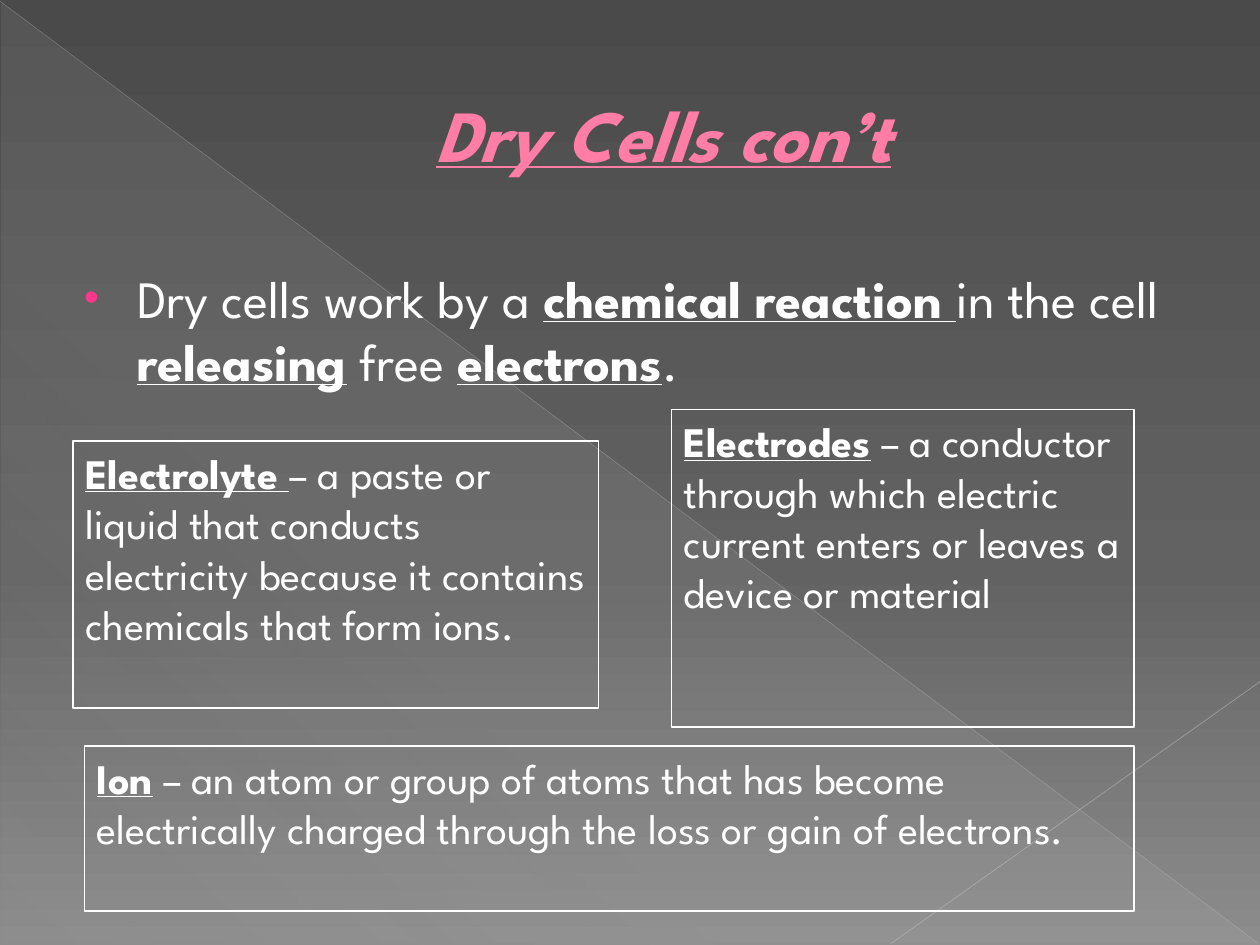
from lxml.etree import SubElement
from pptx import Presentation
from pptx.dml.color import RGBColor
from pptx.enum.shapes import MSO_CONNECTOR, MSO_SHAPE
from pptx.enum.text import MSO_ANCHOR, MSO_AUTO_SIZE, PP_ALIGN
from pptx.oxml import parse_xml
from pptx.oxml.ns import nsdecls, qn
from pptx.util import Inches, Pt

COLORS = {
    "top": "4A4A4A", "middle": "626262", "bottom": "8C8C8C",
    "sheen": "D2D2D2", "diagonal": "BFBFBF", "corner": "C6C6C6",
    "title": "FF7DA7", "title_edge": "B12761", "bullet": "FF388C",
    "white": "FFFFFF",
}
FONT = "League Spartan"
KEY_TERM = {"bold": True, "underline": True}


def rgb(name):
    return RGBColor.from_string(COLORS[name])


def set_gradient(fill, element, stops, angle):
    """Fill with (position %, color name, opacity %) stops."""
    fill.gradient()
    gradient = element.find(".//" + qn("a:gradFill"))
    stop_list = gradient.find(qn("a:gsLst"))
    for old_stop in list(stop_list):
        stop_list.remove(old_stop)
    for position, color, opacity in stops:
        stop = SubElement(stop_list, qn("a:gs"), pos=str(position * 1000))
        shade = SubElement(stop, qn("a:srgbClr"), val=COLORS[color])
        SubElement(shade, qn("a:alpha"), val=str(opacity * 1000))
    gradient.find(qn("a:lin")).set("ang", str(angle * 60000))


def add_run(paragraph, text, size, color="white", **formats):
    run = paragraph.add_run()
    run.text = text
    for name, value in {"name": FONT, "size": Pt(size), **formats}.items():
        setattr(run.font, name, value)
    run.font.color.rgb = rgb(color)
    return run


def set_indent(paragraph, left, first=0):
    properties = paragraph._p.get_or_add_pPr()
    properties.set("marL", str(Inches(left)))
    properties.set("indent", str(Inches(first)))
    return properties


def place(shape, box):
    for name, value in zip(("left", "top", "width", "height"), box):
        setattr(shape, name, Inches(value))


def add_thin_line(slide, start, end, color, width, opacity):
    ends = [Inches(value) for value in (*start, *end)]
    line = slide.shapes.add_connector(MSO_CONNECTOR.STRAIGHT, *ends)
    line.line.color.rgb = rgb(color)
    line.line.width = Pt(width)
    shade = line._element.spPr.find(".//" + qn("a:srgbClr"))
    SubElement(shade, qn("a:alpha"), val=str(opacity * 1000))
    SubElement(line._element.spPr, qn("a:effectLst"))


def add_backdrop(slide):
    set_gradient(slide.background.fill, slide._element,
                 [(0, "top", 100), (60, "middle", 100), (100, "bottom", 100)], 90)
    box = [Inches(value) for value in (0.01, 0.02, 9.99, 7.48)]
    sheen = slide.shapes.add_shape(MSO_SHAPE.RIGHT_TRIANGLE, *box)
    sheen.shadow.inherit = False
    sheen.line.fill.background()
    set_gradient(sheen.fill, sheen._element,
                 [(0, "sheen", 10), (70, "sheen", 8), (100, "sheen", 1)], 133)
    add_thin_line(slide, (0, 0.01), (9.99, 7.49), "diagonal", 0.39, 35)
    add_thin_line(slide, (10, 5.41), (7.07, 7.49), "corner", 0.47, 45)


def add_title(slide, box, text):
    title = slide.shapes.title
    slide.shapes._spTree.append(title._element)  # in front of the backdrop
    place(title, box)
    frame = title.text_frame
    frame.auto_size = MSO_AUTO_SIZE.NONE
    frame.vertical_anchor = MSO_ANCHOR.MIDDLE
    paragraph = frame.paragraphs[0]
    paragraph.alignment = PP_ALIGN.CENTER
    set_indent(paragraph, 0.53)
    run = add_run(paragraph, text, 42, "title", italic=True, **KEY_TERM)
    run._r.get_or_add_rPr().insert(0, parse_xml(
        f'<a:ln {nsdecls("a")} w="{Pt(0.5)}"><a:solidFill>'
        f'<a:srgbClr val="{COLORS["title_edge"]}"/></a:solidFill></a:ln>'))


def add_statement(slide, box, parts):
    """Bulleted sentence; parts are (text, is key term)."""
    text_box = slide.shapes.add_textbox(*[Inches(value) for value in box])
    text_box.text_frame.word_wrap = True
    paragraph = text_box.text_frame.paragraphs[0]
    paragraph.space_before = Pt(6)
    properties = set_indent(paragraph, 0.49, -0.42)
    bullet_color = SubElement(properties, qn("a:buClr"))
    SubElement(bullet_color, qn("a:srgbClr"), val=COLORS["bullet"])
    SubElement(properties, qn("a:buSzPct"), val="80000")
    SubElement(properties, qn("a:buFont"), typeface="Arial")
    SubElement(properties, qn("a:buChar"), char="•")
    for text, is_key in parts:
        add_run(paragraph, text, 30, **(KEY_TERM if is_key else {}))


def add_definition(slide, box, term, meaning):
    shape = slide.shapes.add_shape(MSO_SHAPE.RECTANGLE,
                                   *[Inches(value) for value in box])
    shape.shadow.inherit = False
    shape.fill.background()
    shape.line.color.rgb = rgb("white")
    shape.line.width = Pt(0.75)
    frame = shape.text_frame
    frame.word_wrap = True
    frame.vertical_anchor = MSO_ANCHOR.TOP
    paragraph = frame.paragraphs[0]
    paragraph.alignment = PP_ALIGN.LEFT
    add_run(paragraph, term, 24, **KEY_TERM)
    add_run(paragraph, meaning, 24)


def main():
    presentation = Presentation()
    presentation.slide_width, presentation.slide_height = Inches(10), Inches(7.5)
    slide = presentation.slides.add_slide(presentation.slide_layouts[5])

    add_backdrop(slide)
    add_title(slide, (0.5, 0.29, 9, 1.53), "Dry Cells con’t")
    add_statement(slide, (0.5, 2.06, 9, 1.44), [
        ("Dry cells work by a ", False), ("chemical reaction ", True),
        ("in the cell ", False), ("releasing", True), (" free ", False),
        ("electrons", True), (".", False)])

    # Definitions of the key terms
    for box, term, meaning in [
        ((0.58, 3.5, 4.17, 2.12), "Electrolyte ",
         "– a paste or liquid that conducts electricity because it contains "
         "chemicals that form ions."),
        ((0.67, 5.92, 8.33, 1.31), "Ion",
         " – an atom or group of atoms that has become electrically charged "
         "through the loss or gain of electrons."),
        ((5.33, 3.25, 3.67, 2.52), "Electrodes",
         " – a conductor through which electric current enters or leaves a "
         "device or material"),
    ]:
        add_definition(slide, box, term, meaning)

    presentation.save("out.pptx")


if __name__ == "__main__":
    main()
